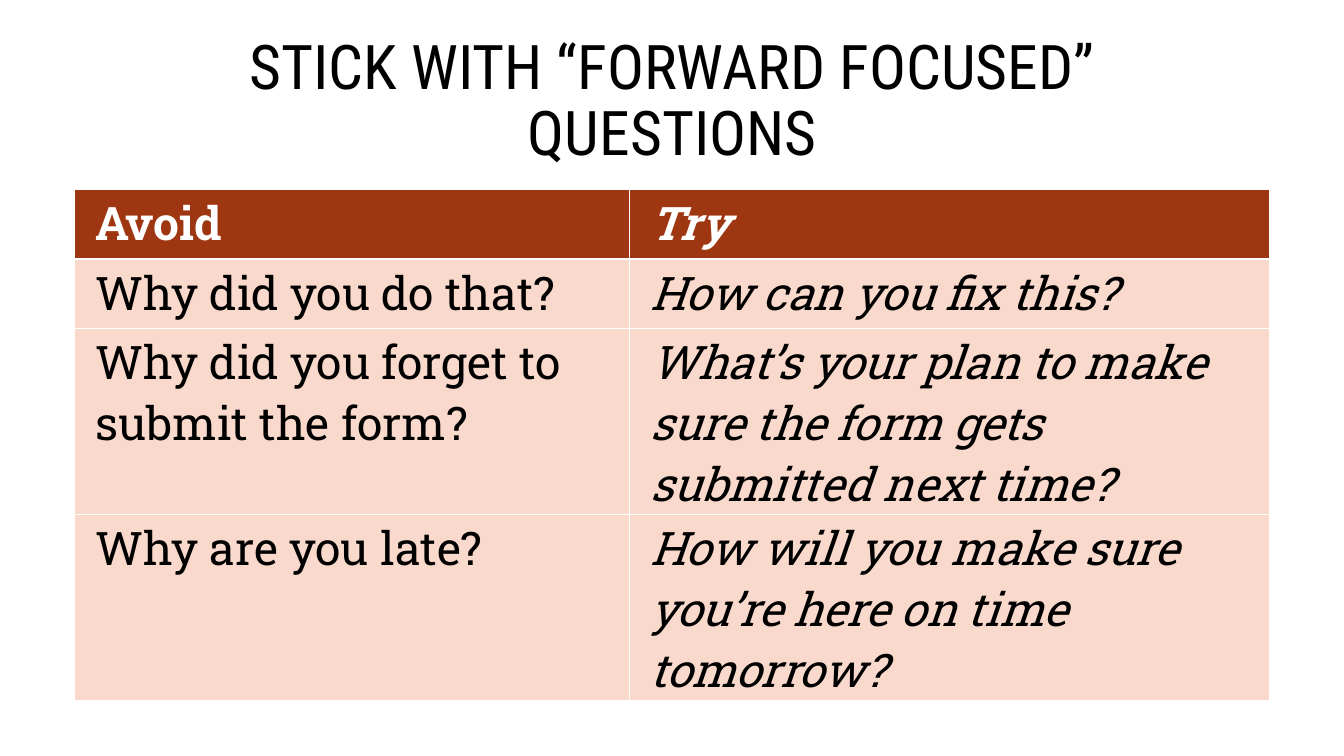
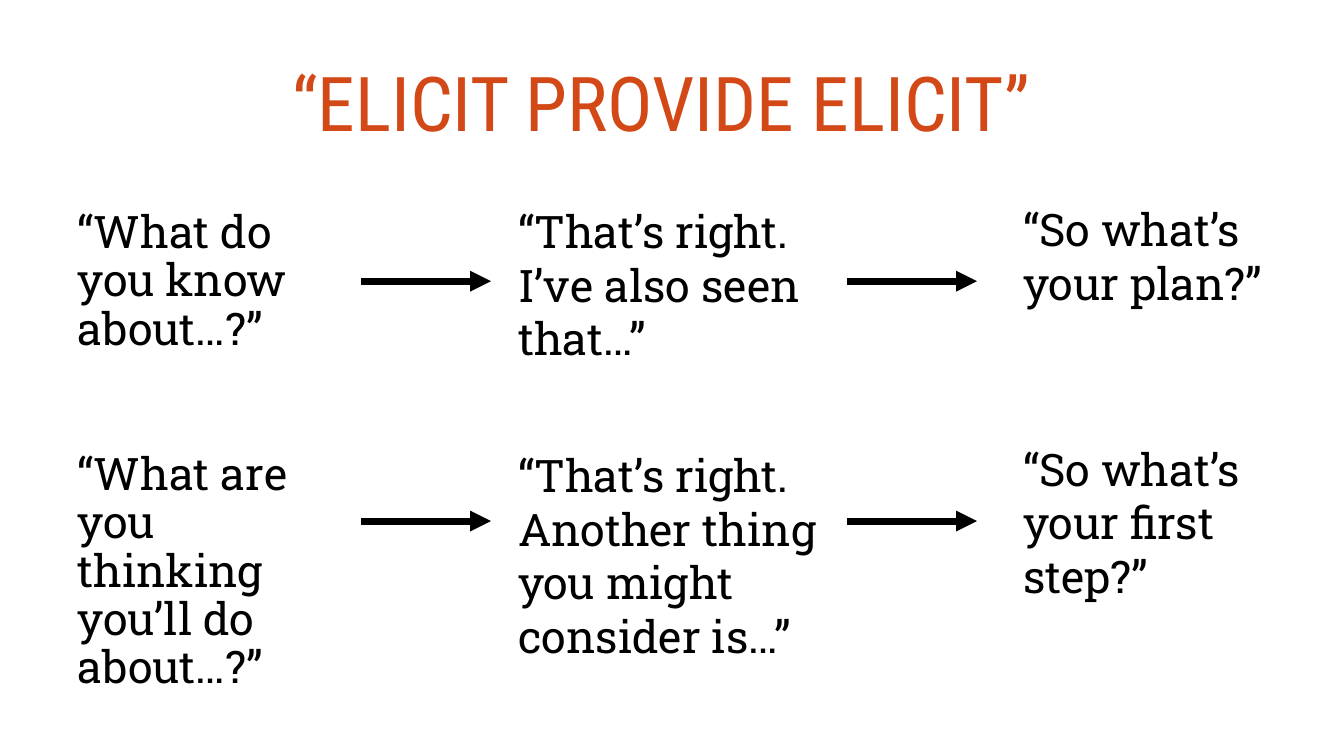
from lxml.etree import SubElement
from pptx import Presentation
from pptx.dml.color import RGBColor
from pptx.enum.shapes import MSO_CONNECTOR
from pptx.enum.text import MSO_ANCHOR, PP_ALIGN
from pptx.oxml.ns import qn
from pptx.util import Inches, Pt

COLORS = {"black": "000000", "white": "FFFFFF", "orange": "D34817",
          "header": "9E3611", "row": "FAD9CD"}
TITLE_FONT = "Roboto Condensed"
BODY_FONT = "Roboto Slab"


def color(name):
    return RGBColor.from_string(COLORS[name])


def set_font(paragraph, name, size, color_name):
    paragraph.font.name = name
    paragraph.font.size = Pt(size)
    paragraph.font.color.rgb = color(color_name)


def add_titled_slide(presentation, text, box, size, color_name):
    slide = presentation.slides.add_slide(presentation.slide_layouts[5])
    title = slide.shapes.title
    title.left, title.top, title.width, title.height = map(Inches, box)
    frame = title.text_frame
    frame.text = text
    frame.word_wrap = True
    frame.vertical_anchor = MSO_ANCHOR.MIDDLE
    paragraph = frame.paragraphs[0]
    paragraph.alignment = PP_ALIGN.CENTER
    paragraph.line_spacing = 0.9
    set_font(paragraph, TITLE_FONT, size, color_name)
    return slide


def add_cell_borders(cell):
    properties = cell._tc.get_or_add_tcPr()
    for position, side in enumerate(("a:lnL", "a:lnR", "a:lnT", "a:lnB")):
        line = properties.makeelement(qn(side), {"w": str(Pt(1))})
        fill = SubElement(line, qn("a:solidFill"))
        SubElement(fill, qn("a:srgbClr"), val=COLORS["white"])
        properties.insert(position, line)


def add_question_table(slide, left, top, column_widths, row_heights, rows):
    frame = slide.shapes.add_table(
        len(rows), len(column_widths), Inches(left), Inches(top),
        Inches(sum(column_widths)), Inches(sum(row_heights)))
    table = frame.table
    for column, width in zip(table.columns, column_widths):
        column.width = Inches(width)
    for row, height in zip(table.rows, row_heights):
        row.height = Inches(height)
    for row_index, texts in enumerate(rows):
        is_header = row_index == 0
        for column_index, text in enumerate(texts):
            cell = table.cell(row_index, column_index)
            cell.text = text
            cell.margin_left = cell.margin_right = Inches(0.21)
            cell.margin_top, cell.margin_bottom = Inches(0.03), Inches(0)
            cell.fill.solid()
            cell.fill.fore_color.rgb = color("header" if is_header else "row")
            add_cell_borders(cell)
            paragraph = cell.text_frame.paragraphs[0]
            set_font(paragraph, BODY_FONT, 33, "white" if is_header else "black")
            paragraph.font.bold = is_header
            paragraph.font.italic = column_index == 1


def add_quote(slide, left, top, width, height, text, line_spacing):
    box = slide.shapes.add_textbox(*map(Inches, (left, top, width, height)))
    frame = box.text_frame
    frame.word_wrap = True
    frame.text = text
    paragraph = frame.paragraphs[0]
    paragraph.line_spacing = line_spacing
    set_font(paragraph, BODY_FONT, 32, "black")


def add_arrow(slide, left, top, length):
    arrow = slide.shapes.add_connector(
        MSO_CONNECTOR.STRAIGHT, Inches(left), Inches(top),
        Inches(left + length), Inches(top))
    arrow.line.color.rgb = color("black")
    arrow.line.width = Pt(5)
    SubElement(arrow.line._get_or_add_ln(), qn("a:tailEnd"), type="triangle")
    SubElement(arrow._element.spPr, qn("a:effectLst"))


def add_conversation(slide, top, quotes, quote_offsets, height):
    """One row: ask, arrow, inform, arrow, ask again."""
    columns = [(0.67, 2.78, 0.9), (5.04, 3.56, 1.0), (10.05, 2.62, 1.0)]
    for text, offset, (left, width, spacing) in zip(quotes, quote_offsets, columns):
        add_quote(slide, left, top + offset, width, height, text, spacing)
    for left in (3.58, 8.4):
        add_arrow(slide, left, top + 0.84, 1.29)


def build_questions_slide(presentation):
    slide = add_titled_slide(presentation, "STICK WITH “FORWARD FOCUSED” QUESTIONS",
                             (1.16, 0.39, 11.02, 1.25), 44, "black")
    add_question_table(slide, 0.74, 1.88, (5.5, 6.35), (0.69, 0.69, 1.84, 1.84), [
        ("Avoid", "Try"),
        ("Why did you do that?", "How can you fix this?"),
        ("Why did you forget to submit the form?",
         "What’s your plan to make sure the form gets submitted next time?"),
        ("Why are you late?", "How will you make sure you’re here on time tomorrow?"),
    ])


def build_elicit_slide(presentation):
    slide = add_titled_slide(presentation, "“ELICIT PROVIDE ELICIT”",
                             (0.45, 0.44, 12.22, 1.25), 54, "orange")
    add_conversation(slide, 1.95, (
        "“What do you know about…?”",
        "“That’s right. I’ve also seen that…”",
        "“So what’s your plan?”"), (0.08, 0.02, 0), 1.55)
    add_conversation(slide, 4.33, (
        "“What are you thinking you’ll do about…?”",
        "“That’s right. Another thing you might consider is…”",
        "“So what’s your first step?”"), (0.1, 0.06, 0), 2.4)


def main():
    presentation = Presentation()
    presentation.slide_width = Inches(13.33)
    presentation.slide_height = Inches(7.5)
    build_questions_slide(presentation)
    build_elicit_slide(presentation)
    presentation.save("out.pptx")


if __name__ == "__main__":
    main()
